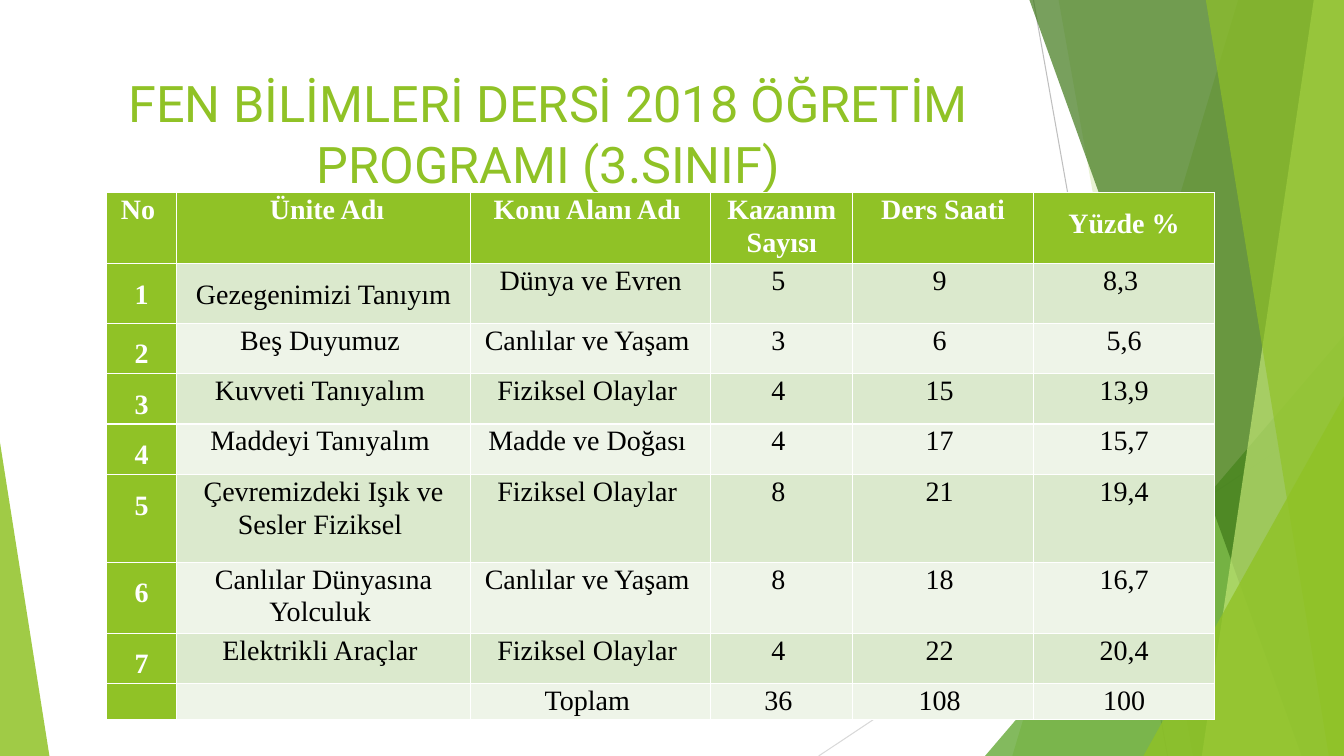
from lxml import etree
from pptx import Presentation
from pptx.dml.color import RGBColor
from pptx.enum.shapes import MSO_CONNECTOR, MSO_SHAPE
from pptx.enum.text import MSO_ANCHOR, PP_ALIGN
from pptx.oxml.ns import qn
from pptx.util import Inches, Pt

STRAIGHT = MSO_CONNECTOR.STRAIGHT
TRIANGLE = MSO_SHAPE.ISOSCELES_TRIANGLE
TOP = MSO_ANCHOR.TOP
CENTER = PP_ALIGN.CENTER

GREEN = RGBColor(0x90, 0xC2, 0x26)
MID_GREEN = RGBColor(0x54, 0xA0, 0x21)
DARK_GREEN = RGBColor(0x3F, 0x78, 0x19)
LIME = RGBColor(0xC0, 0xE4, 0x74)
BAND_ODD = RGBColor(0xDB, 0xE9, 0xCD)
BAND_EVEN = RGBColor(0xEE, 0xF4, 0xE8)
GREY = RGBColor(0xBF, 0xBF, 0xBF)
LIGHT_GREY = RGBColor(0xD9, 0xD9, 0xD9)
WHITE = RGBColor(0xFF, 0xFF, 0xFF)
BLACK = RGBColor(0, 0, 0)

WIDTH, HEIGHT = 13.33, 7.5


def paint(sp, color, opacity):
    """Fill a shape with a see-through colour, without outline or shadow."""
    sp.shadow.inherit = False
    sp.line.fill.background()
    sp.fill.solid()
    sp.fill.fore_color.rgb = color
    clr = sp.fill._xPr.find(qn("a:solidFill"))[0]
    etree.SubElement(clr, qn("a:alpha")).set("val", str(opacity * 1000))


def write(tf, text, font="Times New Roman", size=20, color=BLACK, bold=False,
          spacing=1.06, after=8):
    p = tf.paragraphs[0]
    p.alignment = CENTER
    p.line_spacing = spacing
    p.space_after = Pt(after)
    r = p.add_run()
    r.text = text
    r.font.name = font
    r.font.size = Pt(size)
    r.font.bold = bold
    r.font.color.rgb = color


prs = Presentation()
prs.slide_width, prs.slide_height = Inches(WIDTH), Inches(HEIGHT)
s = prs.slides.add_slide(prs.slide_layouts[6])

# Thin lines behind the facets
for x1, y1, x2, y2, color in [(10.25, 0, 11.58, HEIGHT, GREY),
                              (WIDTH, 4.03, 8.12, HEIGHT, LIGHT_GREY)]:
    line = s.shapes.add_connector(STRAIGHT, Inches(x1), Inches(y1), Inches(x2), Inches(y2))
    line.line.color.rgb = color
    line.line.width = Pt(0.75)
    etree.SubElement(line._element.spPr, qn("a:effectLst"))

# Facets: (top x, bottom x) runs to the right edge; (left, top, width, lean) is a triangle
facets = [
    ((12.28, 10.04), GREEN, 30),
    ((10.5, 11.83), GREEN, 20),
    ((9.77, 3.33, 3.56, 1), MID_GREEN, 72),
    ((10.21, 12.91), DARK_GREEN, 70),
    ((13.03, 11.92), LIME, 70),
    ((11.96, 13.18), GREEN, 65),
    ((11.34, 3.93, 1.99, 1), GREEN, 80),
    ((0, 4.39, 0.49, 0), GREEN, 85),
]
for geometry, color, opacity in facets:
    if len(geometry) == 2:
        top_x, bottom_x = geometry
        outline = s.shapes.build_freeform(Inches(top_x), 0)
        outline.add_line_segments([(Inches(x), Inches(y)) for x, y in
                                   [(WIDTH, 0), (WIDTH, HEIGHT), (bottom_x, HEIGHT)]])
        sp = outline.convert_to_shape()
    else:
        left, top, width, lean = geometry
        sp = s.shapes.add_shape(TRIANGLE, Inches(left), Inches(top),
                                Inches(width), Inches(HEIGHT - top))
        sp.adjustments[0] = lean
    paint(sp, color, opacity)

title = s.shapes.add_textbox(Inches(0.74), Inches(0.67), Inches(9.4), Inches(1.44))
title.text_frame.word_wrap = True
title.text_frame.vertical_anchor = TOP
write(title.text_frame, "FEN BİLİMLERİ DERSİ 2018 ÖĞRETİM PROGRAMI (3.SINIF)",
      font="Roboto", size=36, color=GREEN, spacing=1.0, after=0)

# Curriculum table
rows = [
    ["No ", " Ünite Adı", "Konu Alanı Adı ", "Kazanım Sayısı", "Ders Saati", "Yüzde %"],
    ["1", "Gezegenimizi Tanıyım", "Dünya ve Evren", "5 ", "9 ", "8,3 "],
    ["2", "Beş Duyumuz ", "Canlılar ve Yaşam ", "3 ", "6 ", "5,6"],
    ["3", "Kuvveti Tanıyalım ", "Fiziksel Olaylar ", "4 ", "15 ", "13,9"],
    ["4", "Maddeyi Tanıyalım ", "Madde ve Doğası ", "4 ", "17 ", "15,7"],
    ["5", "Çevremizdeki Işık ve Sesler Fiziksel ", "Fiziksel Olaylar ", "8 ", "21 ", "19,4"],
    ["6", "Canlılar Dünyasına Yolculuk ", "Canlılar ve Yaşam ", "8 ", "18 ", "16,7"],
    ["7", "Elektrikli Araçlar ", "Fiziksel Olaylar ", "4 ", "22 ", "20,4"],
    ["", "", "Toplam ", "36 ", "108 ", "100"],
]
col_widths = [0.69, 2.92, 2.38, 1.41, 1.79, 1.8]
row_heights = [0.67, 0.59, 0.43, 0.43, 0.43, 0.87, 0.67, 0.43, 0.32]
loose_cells = {(0, 5), (1, 1)}

table = s.shapes.add_table(len(rows), len(col_widths), Inches(1.06), Inches(1.91),
                           Inches(sum(col_widths)), Inches(sum(row_heights))).table
table.first_col = True
for col, width in zip(table.columns, col_widths):
    col.width = Inches(width)
for i, (texts, height) in enumerate(zip(rows, row_heights)):
    table.rows[i].height = Inches(height)
    for j, text in enumerate(texts):
        cell = table.cell(i, j)
        heading = i == 0 or j == 0
        cell.margin_left = cell.margin_right = Inches(0.07)
        cell.margin_top = cell.margin_bottom = 0
        cell.vertical_anchor = TOP
        cell.fill.solid()
        cell.fill.fore_color.rgb = GREEN if heading else BAND_ODD if i % 2 else BAND_EVEN
        if text:
            loose = (i > 0 and j == 0) or (i, j) in loose_cells
            write(cell.text_frame, text, color=WHITE if heading else BLACK,
                  bold=heading, spacing=1.5 if loose else 1.06)

prs.save("out.pptx")
